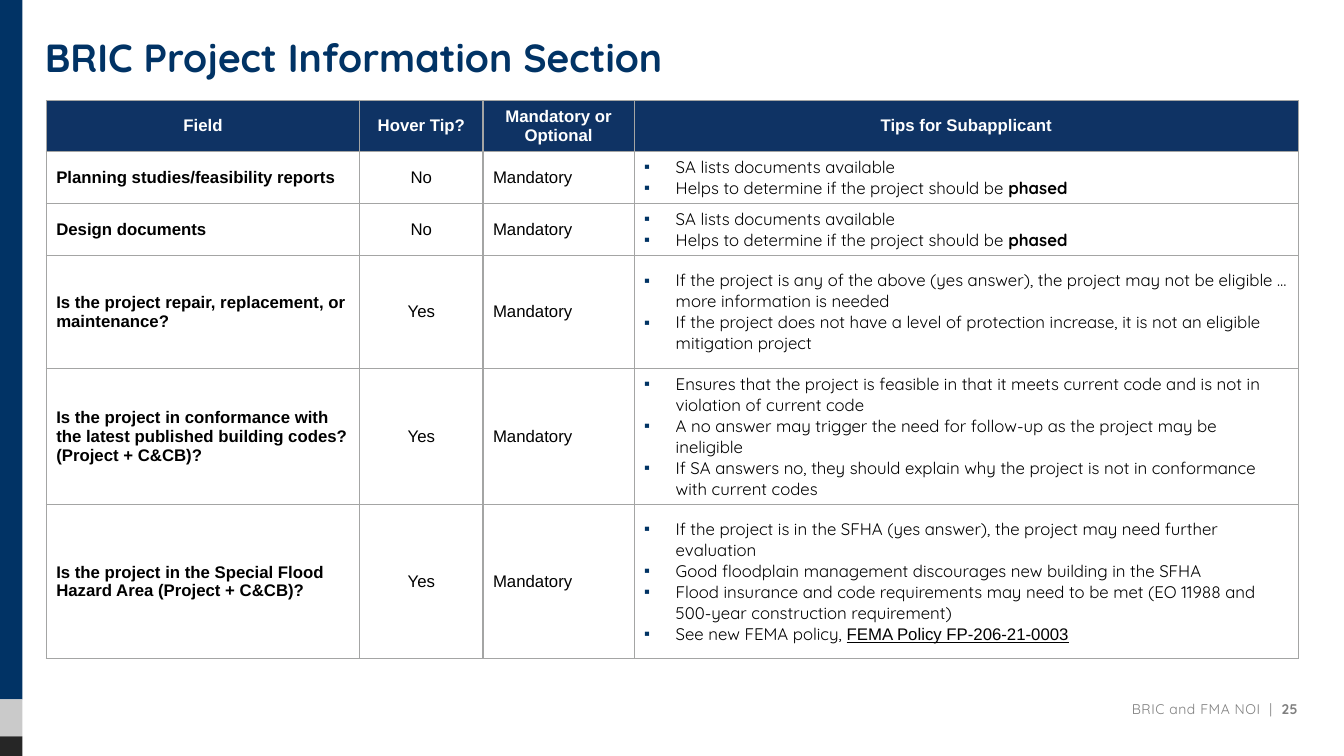
from lxml.etree import SubElement
from pptx import Presentation
from pptx.dml.color import RGBColor
from pptx.enum.shapes import MSO_SHAPE
from pptx.enum.text import MSO_ANCHOR, PP_ALIGN
from pptx.oxml import parse_xml
from pptx.oxml.ns import nsdecls, qn
from pptx.util import Pt

COLORS = {
    "navy": "013365", "header": "0F3364", "bullet": "003364",
    "silver": "CACACA", "charcoal": "262626", "grid": "A4A5A4",
    "footer": "7F7F7F", "black": "000000", "white": "FFFFFF",
}
BODY, DISPLAY = "Arial", "Quicksand"
PHASED = ["Helps to determine if the project should be ", ("phased", "bold")]
STUDY_TIPS = [["SA lists documents available"], PHASED]

HEADINGS = ["Field", "Hover Tip?", "Mandatory or Optional", "Tips for Subapplicant"]
COLUMN_WIDTHS = [224, 88, 108, 474.5]
ROW_HEIGHTS = [34.5, 37.2, 37.2, 80.7, 97.2, 110.2]
FIELDS = [
    ("Planning studies/feasibility reports", "No", STUDY_TIPS),
    ("Design documents", "No", STUDY_TIPS),
    ("Is the project repair, replacement, or maintenance?", "Yes", [
        ["If the project is any of the above (yes answer), the project may not be "
         "eligible … more information is needed"],
        ["If the project does not have a level of protection increase, it is not an "
         "eligible mitigation project"],
    ]),
    ("Is the project in conformance with the latest published building codes? "
     "(Project + C&CB)?", "Yes", [
        ["Ensures that the project is feasible in that it meets current code and is "
         "not in violation of current code"],
        ["A no answer may trigger the need for follow-up as the project may be ineligible"],
        ["If SA answers no, they should explain why the project is not in conformance "
         "with current codes"],
     ]),
    ("Is the project in the Special Flood Hazard Area (Project + C&CB)?", "Yes", [
        ["If the project is in the SFHA (yes answer), the project may need further evaluation"],
        ["Good floodplain management discourages new building in the SFHA"],
        ["Flood insurance and code requirements may need to be met (EO 11988 and "
         "500-year construction requirement)"],
        ["See new FEMA policy, ", ("FEMA Policy FP-206-21-0003", "reference")],
    ]),
]


def color(name):
    return RGBColor.from_string(COLORS[name])


class SlideBuilder:
    """Holds the shared text style and the slide being filled."""

    def __init__(self, slide, size=12):
        self.slide = slide
        self.size = size

    def bar(self, left, top, width, height, fill):
        bar = self.slide.shapes.add_shape(
            MSO_SHAPE.RECTANGLE, Pt(left), Pt(top), Pt(width), Pt(height))
        bar.shadow.inherit = False
        bar.fill.solid()
        bar.fill.fore_color.rgb = color(fill)
        bar.line.fill.background()

    def style(self, paragraph, font=BODY, ink="black", bold=False, size=None,
              align=PP_ALIGN.LEFT):
        paragraph.alignment = align
        paragraph.font.name = font
        paragraph.font.size = Pt(size or self.size)
        paragraph.font.color.rgb = color(ink)
        paragraph.font.bold = bold

    def text(self, left, top, width, height, parts, anchor=MSO_ANCHOR.TOP,
             spacing=0, **style):
        """Add a one-paragraph box; a part is text or a (text, emphasis) pair."""
        frame = self.slide.shapes.add_textbox(
            Pt(left), Pt(top), Pt(width), Pt(height)).text_frame
        frame.word_wrap = True
        frame.vertical_anchor = anchor
        frame.margin_left = frame.margin_right = 0
        self.runs(frame.paragraphs[0], parts)
        self.style(frame.paragraphs[0], **style)
        if spacing:
            for run in frame.paragraphs[0].runs:
                run.font._element.set("spc", str(round(spacing * 100)))

    def runs(self, paragraph, parts):
        for part in parts:
            words, emphasis = (part, None) if isinstance(part, str) else part
            run = paragraph.add_run()
            run.text = words
            if emphasis == "bold":
                run.font.bold = True
            elif emphasis == "reference":
                run.font.name = BODY
                run.font.underline = True

    def table(self, left, top, widths, heights):
        table = self.slide.shapes.add_table(
            len(heights), len(widths), Pt(left), Pt(top),
            Pt(sum(widths)), Pt(sum(heights))).table
        table.horz_banding = False
        for column, width in zip(table.columns, widths):
            column.width = Pt(width)
        for row, height in zip(table.rows, heights):
            row.height = Pt(height)
        return table

    def cell(self, cell, paragraphs, fill="white", bulleted=False, **style):
        cell.fill.solid()
        cell.fill.fore_color.rgb = color(fill)
        cell.vertical_anchor = MSO_ANCHOR.MIDDLE
        self.borders(cell)
        frame = cell.text_frame
        for index, parts in enumerate(paragraphs):
            paragraph = frame.add_paragraph() if index else frame.paragraphs[0]
            if bulleted:
                self.bullet(paragraph)
            self.runs(paragraph, parts)
            self.style(paragraph, **style)

    def borders(self, cell):
        properties = cell._tc.get_or_add_tcPr()
        for index, side in enumerate("LRTB"):
            properties.insert(index, parse_xml(
                f'<a:ln{side} {nsdecls("a")} w="{Pt(1)}"><a:solidFill>'
                f'<a:srgbClr val="{COLORS["grid"]}"/></a:solidFill></a:ln{side}>'))

    def bullet(self, paragraph, indent=22.5):
        properties = paragraph._p.get_or_add_pPr()
        properties.set("marL", str(Pt(indent)))
        properties.set("indent", str(-Pt(indent)))
        tint = SubElement(properties, qn("a:buClr"))
        SubElement(tint, qn("a:srgbClr"), val=COLORS["bullet"])
        SubElement(properties, qn("a:buFont"), typeface=BODY)
        SubElement(properties, qn("a:buChar"), char="▪")


def main():
    presentation = Presentation()
    presentation.slide_width, presentation.slide_height = Pt(960), Pt(540)
    page = SlideBuilder(presentation.slides.add_slide(presentation.slide_layouts[6]))

    top = 0
    for height, fill in [(499.5, "navy"), (26.5, "silver"), (14, "charcoal")]:
        page.bar(0, top, 16, height, fill)
        top += height

    page.text(32, 20, 895, 60, ["BRIC Project Information Section"],
              font=DISPLAY, ink="navy", bold=True, size=28)

    table = page.table(33, 72, COLUMN_WIDTHS, ROW_HEIGHTS)
    for column, heading in enumerate(HEADINGS):
        page.cell(table.cell(0, column), [[heading]], fill="header",
                  ink="white", bold=True, align=PP_ALIGN.CENTER)
    for row, (field, hover_tip, tips) in enumerate(FIELDS, start=1):
        page.cell(table.cell(row, 0), [[field]], bold=True)
        page.cell(table.cell(row, 1), [[hover_tip]], align=PP_ALIGN.CENTER)
        page.cell(table.cell(row, 2), [["Mandatory"]])
        page.cell(table.cell(row, 3), tips, bulleted=True, font=DISPLAY)

    page.text(345, 495.5, 582, 21, ["BRIC and FMA NOI  |  ", ("25", "bold")],
              anchor=MSO_ANCHOR.MIDDLE, spacing=0.4, font=DISPLAY,
              ink="footer", size=10, align=PP_ALIGN.RIGHT)

    presentation.save("out.pptx")


if __name__ == "__main__":
    main()
